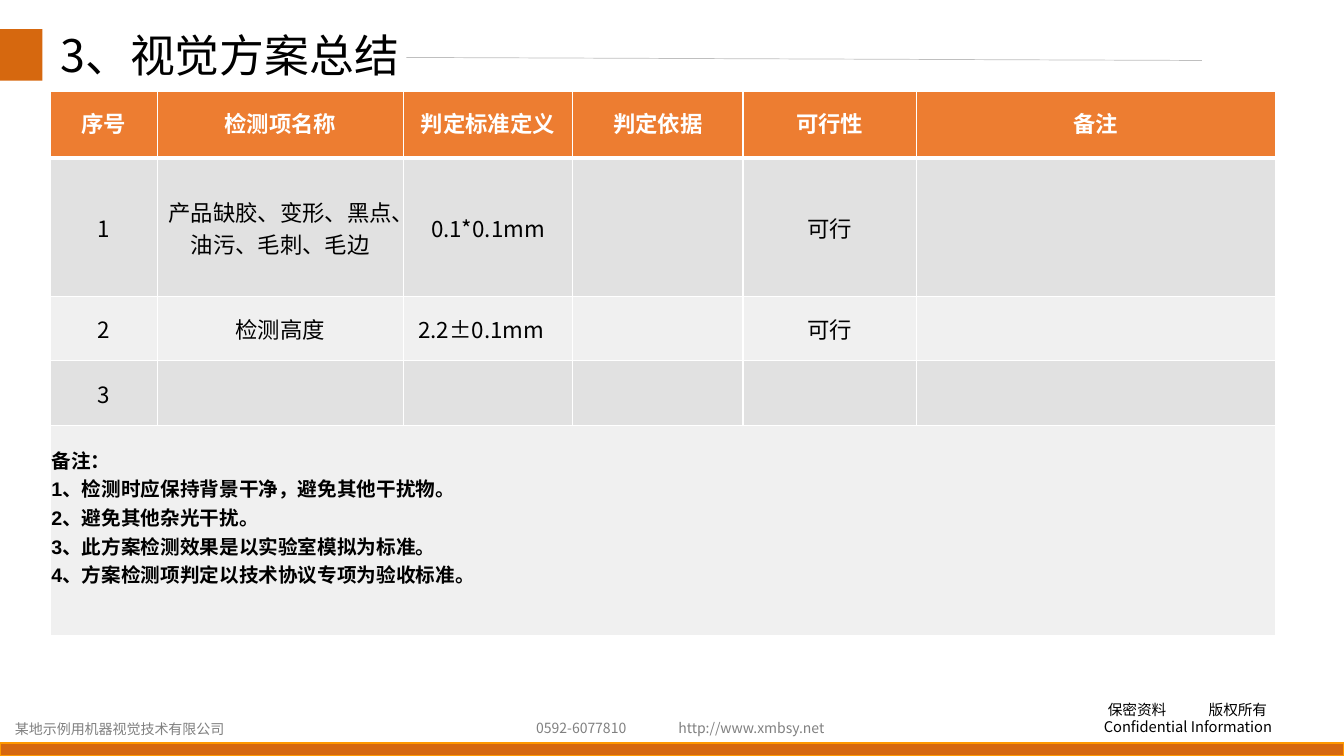
from dataclasses import dataclass

from lxml.etree import SubElement
from pptx import Presentation
from pptx.dml.color import RGBColor
from pptx.enum.shapes import MSO_CONNECTOR, MSO_SHAPE
from pptx.enum.text import MSO_ANCHOR, PP_ALIGN
from pptx.oxml.ns import qn
from pptx.util import Inches, Pt

BLACK = RGBColor(0x00, 0x00, 0x00)
WHITE = RGBColor(0xFF, 0xFF, 0xFF)
GRAY = RGBColor(0x80, 0x80, 0x80)
RULE = RGBColor(0xBF, 0xBF, 0xBF)
RUST = RGBColor(0xD6, 0x68, 0x0F)
AMBER = RGBColor(0xFF, 0x99, 0x00)
HEADER = RGBColor(0xED, 0x7D, 0x31)
BAND_DARK = RGBColor(0xE1, 0xE1, 0xE1)
BAND_LIGHT = RGBColor(0xF0, 0xF0, 0xF0)
CJK = "Noto Sans CJK SC"


@dataclass
class Label:
    text: str
    left: float
    top: float
    width: float
    height: float
    size: float = 10
    color: RGBColor = GRAY
    spacing: float = 1.0


@dataclass
class Bar:
    left: float
    top: float
    width: float
    height: float
    line: RGBColor | None = None


BARS = [Bar(0, 7.37, 13.33, 0.13, AMBER), Bar(0, 0.29, 0.42, 0.51)]
LABELS = [
    Label("http://www.xmbsy.net", 6.63, 7.09, 1.67, 0.27),
    Label("0592-6077810", 5.22, 7.09, 1.3, 0.27),
    Label("某地示例用机器视觉技术有限公司", 0.05, 7.1, 2.35, 0.27),
    Label("3、视觉方案总结", 0.5, 0.29, 3.98, 0.71, 32, BLACK, 0.9),
]
CONFIDENTIAL = Label("保密资料\t版权所有\nConfidential Information",
                     10.85, 6.9, 2.17, 0.45, 10.5, BLACK)
COLUMNS = [1.06, 2.44, 1.68, 1.69, 1.72, 3.56]
HEIGHTS = [0.66, 1.37, 0.64, 0.64, 2.09]
NOTES = """备注：
1、检测时应保持背景干净，避免其他干扰物。
2、避免其他杂光干扰。
3、此方案检测效果是以实验室模拟为标准。
4、方案检测项判定以技术协议专项为验收标准。"""
ROWS = [
    ["序号", "检测项名称", "判定标准定义", "判定依据", "可行性", "备注"],
    ["1", "产品缺胶、变形、黑点、油污、毛刺、毛边", "0.1*0.1mm", "", "可行", ""],
    ["2", "检测高度", "2.2±0.1mm", "", "可行", ""],
    ["3", "", "", "", "", ""],
    [NOTES, "", "", "", "", ""],
]
FILLS = [HEADER, BAND_DARK, BAND_LIGHT, BAND_DARK, BAND_LIGHT]


def write(tf, text: str, *, size: float, color: RGBColor, font: str = CJK,
          bold: bool = False, align=PP_ALIGN.LEFT, spacing: float = 1.0) -> None:
    for i, line in enumerate(text.split("\n")):
        p = tf.paragraphs[0] if i == 0 else tf.add_paragraph()
        p.alignment = align
        p.line_spacing = spacing
        r = p.add_run()
        r.text = line
        r.font.size = Pt(size)
        r.font.bold = bold
        r.font.color.rgb = color
        r.font.name = font
        SubElement(r.font._element, qn("a:ea")).set("typeface", CJK)


def add_bar(slide, bar: Bar) -> None:
    sp = slide.shapes.add_shape(MSO_SHAPE.RECTANGLE, Inches(bar.left), Inches(bar.top),
                                Inches(bar.width), Inches(bar.height))
    sp.shadow.inherit = False
    sp.fill.solid()
    sp.fill.fore_color.rgb = RUST
    if bar.line is None:
        sp.line.fill.background()
    else:
        sp.line.color.rgb = bar.line
        sp.line.width = Pt(1)


def add_label(slide, label: Label):
    sp = slide.shapes.add_textbox(Inches(label.left), Inches(label.top),
                                  Inches(label.width), Inches(label.height))
    tf = sp.text_frame
    tf.word_wrap = True
    write(tf, label.text, size=label.size, color=label.color, spacing=label.spacing)
    return tf


def add_confidential(slide) -> None:
    p = add_label(slide, CONFIDENTIAL).paragraphs[0]
    pPr = p._p.get_or_add_pPr()
    pPr.set("marL", str(Inches(0.04)))
    pPr.set("indent", "0")
    tabs = SubElement(pPr, qn("a:tabLst"))
    SubElement(tabs, qn("a:tab"), pos=str(Inches(0.81)), algn="l")


def add_rule(slide) -> None:
    c = slide.shapes.add_connector(MSO_CONNECTOR.STRAIGHT, Inches(4.03), Inches(0.57),
                                   Inches(11.92), Inches(0.6))
    c.line.color.rgb = RULE
    c.line.width = Pt(0.5)
    SubElement(c._element.spPr, qn("a:effectLst"))


def set_borders(cell, bottom: float) -> None:
    tcPr = cell._tc.get_or_add_tcPr()
    widths = {"lnL": 1, "lnR": 1, "lnT": 1, "lnB": bottom}
    for i, (side, width) in enumerate(widths.items()):
        ln = SubElement(tcPr, qn(f"a:{side}"), w=str(Pt(width)))
        fill = SubElement(ln, qn("a:solidFill"))
        SubElement(fill, qn("a:srgbClr"), val=str(WHITE))
        tcPr.insert(i, ln)


def fill_cell(cell, text: str, row: int) -> None:
    cell.fill.solid()
    cell.fill.fore_color.rgb = FILLS[row]
    set_borders(cell, 3 if row == 0 else 1)
    if row == 0:
        write(cell.text_frame, text, size=16, color=WHITE, bold=True,
              align=PP_ALIGN.CENTER, spacing=1.3)
        return
    cell.vertical_anchor = MSO_ANCHOR.MIDDLE
    cell.margin_left = cell.margin_right = cell.margin_top = Inches(0.01)
    cell.margin_bottom = 0
    if text == NOTES:
        cell.margin_bottom = Inches(0.28)
        write(cell.text_frame, text, size=14, color=BLACK, font="Arial", bold=True)
    elif "±" in text:
        cell.margin_left = Inches(0.15)
        write(cell.text_frame, text, size=16, color=BLACK)
    elif text:
        write(cell.text_frame, text, size=16, color=BLACK, align=PP_ALIGN.CENTER)


def add_summary_table(slide) -> None:
    table = slide.shapes.add_table(len(ROWS), len(COLUMNS), Inches(0.5), Inches(0.91),
                                   Inches(sum(COLUMNS)), Inches(sum(HEIGHTS))).table
    table.first_row = table.horz_banding = False
    for column, width in zip(table.columns, COLUMNS):
        column.width = Inches(width)
    for row, height in zip(table.rows, HEIGHTS):
        row.height = Inches(height)
    for i, texts in enumerate(ROWS):
        for j, text in enumerate(texts):
            fill_cell(table.cell(i, j), text, i)
    last = len(ROWS) - 1
    table.cell(last, 0).merge(table.cell(last, len(COLUMNS) - 1))


def main() -> None:
    prs = Presentation()
    prs.slide_width = Inches(13.33)
    prs.slide_height = Inches(7.5)
    s = prs.slides.add_slide(prs.slide_layouts[6])
    for bar in BARS:
        add_bar(s, bar)
    add_rule(s)
    add_confidential(s)
    for label in LABELS:
        add_label(s, label)
    add_summary_table(s)
    prs.save("out.pptx")


if __name__ == "__main__":
    main()
